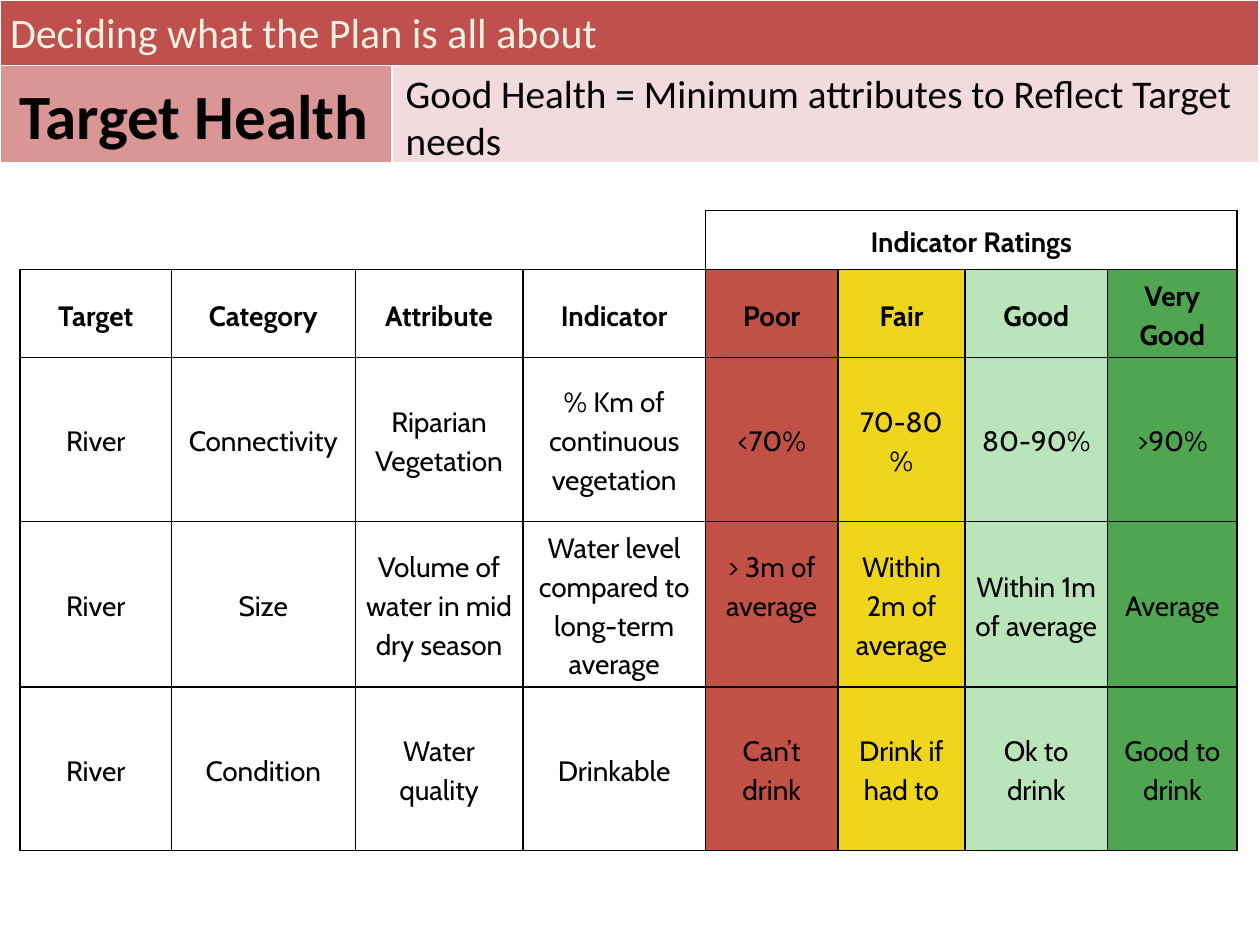
from lxml import etree
from pptx import Presentation
from pptx.dml.color import RGBColor
from pptx.enum.text import MSO_ANCHOR, MSO_AUTO_SIZE, PP_ALIGN
from pptx.oxml.ns import qn
from pptx.util import Inches, Pt

LEFT, CENTER = PP_ALIGN.LEFT, PP_ALIGN.CENTER
TOP, MIDDLE = MSO_ANCHOR.TOP, MSO_ANCHOR.MIDDLE
NO_AUTOFIT = MSO_AUTO_SIZE.NONE

BLACK, WHITE = "000000", "FFFFFF"

# placeholder index, text, box, alignment, anchor, font
HEADINGS = [
    (1, "Deciding what the Plan is all about", (-0.02, 0, 9.98, 0.51), LEFT, MIDDLE,
     dict(size=Pt(24), bold=False, name="Calibri"), "EBF1DE"),
    (0, "Target Health", (0, 0.55, 3.08, 0.71), CENTER, MIDDLE,
     dict(size=Pt(36), bold=True, name="Calibri"), BLACK),
    (2, "Good Health = Minimum attributes to Reflect Target needs",
     (3.12, 0.5, 6.88, 0.75), LEFT, TOP,
     dict(size=Pt(22.4), bold=False, name="Calibri"), BLACK),
]

BANNER_COLUMNS = [3.11, 6.88]
BANNER_ROWS = [0.52, 0.77]
BANNER_FILLS = [["C0504D", "C0504D"], ["D99694", "F2DCDB"]]

RATINGS_TITLE = "Indicator Ratings"
HEALTH_ROWS = [
    ["Target", "Category", "Attribute", "Indicator", "Poor", "Fair", "Good", "Very Good"],
    ["River", "Connectivity", "Riparian Vegetation", "% Km of continuous vegetation",
     "<70%", "70-80 %", "80-90%", ">90%"],
    ["River", "Size", "Volume of water in mid dry season",
     "Water level compared to long-term average",
     "> 3m of average", "Within 2m of average", "Within 1m of average", "Average"],
    ["River", "Condition", "Water quality", "Drinkable",
     "Can’t drink", "Drink if had to", "Ok to drink", "Good to drink"],
]
RATING_FILLS = ["C15046", "EFD61D", "BAE5BA", "50A550"]
HEALTH_COLUMNS = [1.2, 1.46, 1.33, 1.45, 1.05, 1.01, 1.13, 1.03]
HEALTH_HEIGHTS = [0.47, 0.68, 1.3, 1.3, 1.3]
FIRST_RATING = len(HEALTH_COLUMNS) - len(RATING_FILLS)
CELL_MARGINS = dict(margin_left=0.06, margin_top=0.04, margin_right=0.06, margin_bottom=0.04)
RAISED_CELL, RAISED_MARGIN = (3, FIRST_RATING), 0.35


def rgb(color):
    return RGBColor.from_string(color)


def set_font(font, color, **values):
    for attribute, value in values.items():
        setattr(font, attribute, value)
    font.color.rgb = rgb(color)


def set_borders(cell, color, **widths):
    """Draw the sides L, R, T, B, given in that order with widths in points."""
    properties = cell._tc.get_or_add_tcPr()
    for side, width in widths.items():
        line = etree.SubElement(properties, qn(f"a:ln{side}"), w=str(Pt(width)))
        fill = etree.SubElement(line, qn("a:solidFill"))
        etree.SubElement(fill, qn("a:srgbClr"), val=color)


def set_fill(cell, color):
    if color:
        cell.fill.solid()
        cell.fill.fore_color.rgb = rgb(color)
    else:
        cell.fill.background()


def add_grid(slide, left, top, columns, rows):
    frame = slide.shapes.add_table(len(rows), len(columns), Inches(left), Inches(top),
                                   Inches(sum(columns)), Inches(sum(rows)))
    table = frame.table
    table.first_row = table.horz_banding = False
    for column, width in zip(table.columns, columns):
        column.width = Inches(width)
    for row, height in zip(table.rows, rows):
        row.height = Inches(height)
    return frame


def add_banner(slide):
    frame = add_grid(slide, 0, 0, BANNER_COLUMNS, BANNER_ROWS)
    for r, fills in enumerate(BANNER_FILLS):
        for c, color in enumerate(fills):
            cell = frame.table.cell(r, c)
            set_borders(cell, WHITE, L=1, R=1, T=1, B=1)
            set_fill(cell, color)
    frame.table.cell(0, 0).merge(frame.table.cell(0, 1))
    slide.shapes._spTree.insert(2, frame._element)  # behind the headings


def add_headings(slide):
    for index, text, box, alignment, anchor, font, color in HEADINGS:
        heading = slide.placeholders[index]
        heading.left, heading.top, heading.width, heading.height = map(Inches, box)
        frame = heading.text_frame
        frame.text = text
        frame.auto_size = NO_AUTOFIT
        frame.vertical_anchor = anchor
        paragraph = frame.paragraphs[0]
        paragraph.alignment = alignment
        paragraph.space_before = Pt(0)
        properties = paragraph._p.get_or_add_pPr()
        properties.set("marL", "0")
        properties.set("indent", "0")
        etree.SubElement(properties, qn("a:buNone"))
        set_font(paragraph.runs[0].font, color, **font)


def write_cell(cell, text, bold):
    for side, inset in CELL_MARGINS.items():
        setattr(cell, side, Inches(inset))
    cell.vertical_anchor = MIDDLE
    cell.text = text
    paragraph = cell.text_frame.paragraphs[0]
    paragraph.alignment = CENTER
    paragraph.line_spacing = 1.15
    paragraph.space_after = Pt(3.9)
    set_font(paragraph.runs[0].font, BLACK, size=Pt(16), name="Cabin", bold=bold)


def add_health_table(slide):
    table = add_grid(slide, 0.16, 1.67, HEALTH_COLUMNS, HEALTH_HEIGHTS).table
    for c in range(len(HEALTH_COLUMNS)):
        cell = table.cell(0, c)
        if c >= FIRST_RATING:
            set_borders(cell, BLACK, L=1, R=1, T=1, B=1)
        elif c == FIRST_RATING - 1:
            set_borders(cell, BLACK, R=1, B=1)
        else:
            set_borders(cell, BLACK, B=1)
        set_fill(cell, None)
    ratings = table.cell(0, FIRST_RATING)
    ratings.merge(table.cell(0, len(HEALTH_COLUMNS) - 1))
    write_cell(ratings, RATINGS_TITLE, bold=True)

    fills = [None] * FIRST_RATING + RATING_FILLS
    for r, texts in enumerate(HEALTH_ROWS, start=1):
        for c, (text, color) in enumerate(zip(texts, fills)):
            cell = table.cell(r, c)
            set_borders(cell, BLACK, L=1, R=1, T=1, B=1)
            set_fill(cell, color)
            write_cell(cell, text, bold=r == 1)
    table.cell(*RAISED_CELL).margin_bottom = Inches(RAISED_MARGIN)


def main():
    deck = Presentation()
    deck.slide_width, deck.slide_height = Inches(10), Inches(7.5)
    slide = deck.slides.add_slide(deck.slide_layouts[3])
    add_banner(slide)
    add_headings(slide)
    add_health_table(slide)
    deck.save("out.pptx")


if __name__ == "__main__":
    main()
